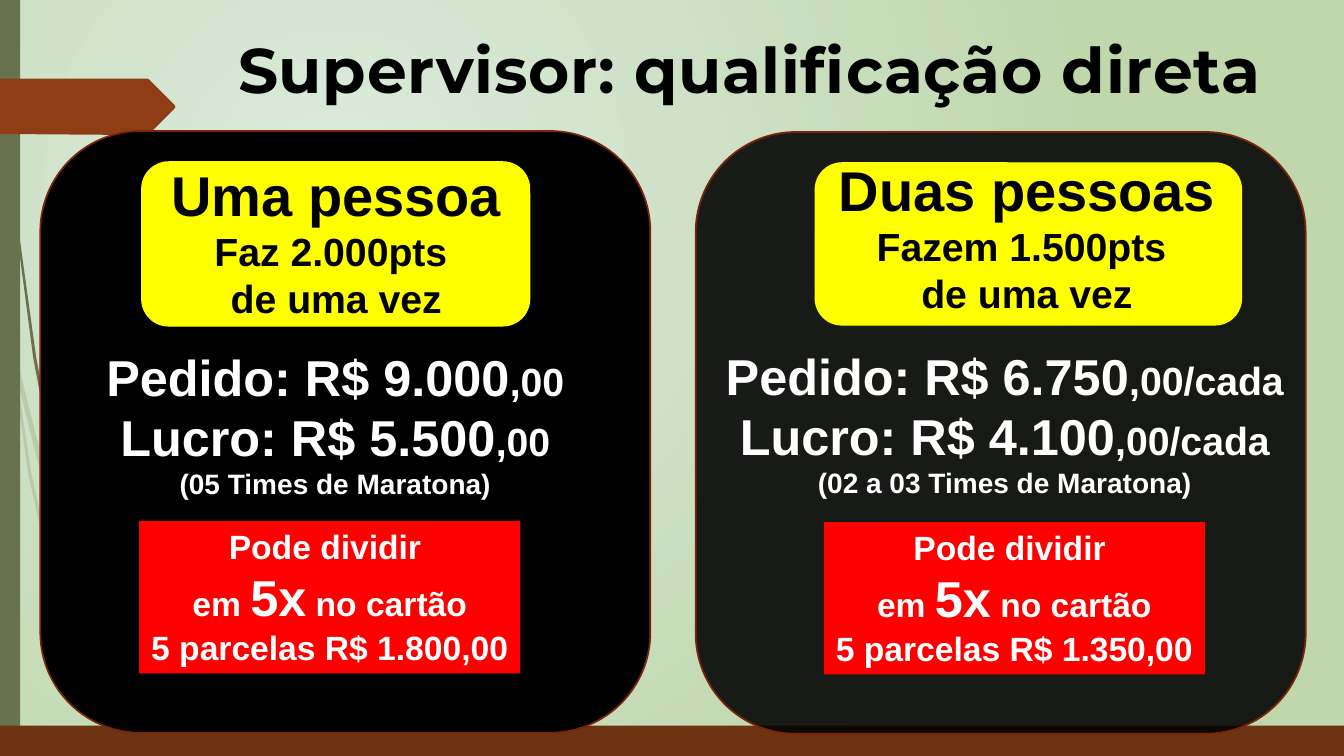
from lxml.etree import SubElement
from pptx import Presentation
from pptx.dml.color import RGBColor
from pptx.enum.shapes import MSO_SHAPE
from pptx.enum.text import MSO_ANCHOR, PP_ALIGN
from pptx.oxml.ns import qn
from pptx.util import Inches, Pt

prs = Presentation()
prs.slide_width, prs.slide_height = Inches(13.33), Inches(7.5)
s = prs.slides.add_slide(prs.slide_layouts[6])


def paint(sp, color, alpha=100, line=None):
    """Fill a shape with a hex colour, with optional opacity and outline."""
    sp.shadow.inherit = False
    sp.fill.solid()
    sp.fill.fore_color.rgb = RGBColor.from_string(color)
    if alpha < 100:
        clr = sp.fill._xPr.find(qn("a:solidFill"))[0]
        SubElement(clr, qn("a:alpha"), val=str(alpha * 1000))
    if line:
        sp.line.color.rgb = RGBColor.from_string(line)
        sp.line.width = Pt(1.25)
    else:
        sp.line.fill.background()
    return sp


def write(sp, lines, color, font="Arial", anchor=MSO_ANCHOR.TOP, spc=0):
    """Write centred bold lines, each a list of (text, size) runs."""
    tf = sp.text_frame
    tf.word_wrap = False
    tf.vertical_anchor = anchor
    for i, runs in enumerate(lines):
        p = tf.paragraphs[0] if i == 0 else tf.add_paragraph()
        p.alignment = PP_ALIGN.CENTER
        for text, size in runs:
            r = p.add_run()
            r.text = text
            r.font.name, r.font.size, r.font.bold = font, Pt(size), True
            r.font.color.rgb = RGBColor.from_string(color)
            if spc:
                r.font._element.set("spc", str(spc))


# Background: radial gradient
fill = s.background.fill
fill.gradient()
for stop, color in zip(fill.gradient_stops, ("FFFFFF", "DFE8C4")):
    stop.color.rgb = RGBColor.from_string(color)
    stop.position = 0 if color == "FFFFFF" else 1
grad = s.background._cSld.find(".//" + qn("a:gradFill"))
grad.remove(grad.find(qn("a:lin")))
radial = SubElement(grad, qn("a:path"), path="circle")
SubElement(radial, qn("a:fillToRect"), l="50000", t="50000", r="100000", b="100000")

# Grass blades on the left, in inches: pale ones, then solid ones
pale = [
    [(0.11, 3.5), (0.08, 3.22), (0, 2.82), (0, 2.99), (0.1, 3.44)],
    [(0.57, 5.22), (0.84, 5.99), (0.85, 5.86), (0.62, 5.2), (0.36, 4.33), (0.14, 3.45),
     (0.17, 3.76), (0.35, 4.49)],
    [(0.92, 6.07), (0.88, 5.96), (0.88, 6.1), (1.23, 6.94), (1.5, 7.5), (1.55, 7.5), (1.27, 6.92)],
    [(1.19, 7.5), (1.24, 7.5), (1.05, 7.11)],
    [(0.93, 6.83), (0.7, 6.19), (0.48, 5.45), (0.31, 4.69), (0.17, 3.76), (0.11, 3.5),
     (0.28, 4.7), (0.45, 5.46), (0.65, 6.21), (0.92, 6.93), (1.01, 7.14), (0.99, 7.07)],
    [(1.01, 7.14), (1.14, 7.5), (1.19, 7.5)],
    [(0.96, 6.92), (0.93, 6.83), (0.99, 7.07), (1.01, 7.14), (1.19, 7.5), (1.05, 7.11)],
]
solid = [
    [(0.07, 1.1), (0.17, 2.33), (0.33, 3.55), (0.56, 4.77), (0.57, 4.81), (0.55, 4.57), (0.55, 4.53),
     (0.36, 3.55), (0.19, 2.32), (0.08, 1.09), (0.05, 0.48), (0.03, 0), (0.03, 0.48)],
    [(1.13, 6.49), (1.1, 6.41), (1.11, 6.56), (1.32, 7.08), (1.52, 7.49), (1.57, 7.49), (1.36, 7.06)],
    [(1.33, 7.49), (1.36, 7.49), (1.22, 7.19)],
    [(1.17, 7.22), (1.27, 7.49), (1.31, 7.49)],
    [(1.16, 7.06), (1.1, 6.91), (1.16, 7.17), (1.17, 7.22), (1.31, 7.49), (1.33, 7.49), (1.22, 7.19)],
]
tag = [(1.73, 1.08), (1.48, 1.33), (1.46, 1.34), (1.36, 1.34), (0, 1.33), (0, 0.78),
       (1.46, 0.78), (1.48, 0.79), (1.73, 1.04), (1.74, 1.06)]
outlines = [(b, "766F54", 20) for b in pale] + [(b, "766F54", 100) for b in solid]

# Side bar, bottom bar and arrow tag follow the blades
for points, color, alpha in outlines + [(tag, "A53010", 100)]:
    if points is tag:
        for x, y, w, h, bar in ((0, 0, 0.2, 7.5, "766F54"), (0, 7.2, 13.33, 0.3, "7C240C")):
            paint(s.shapes.add_shape(MSO_SHAPE.RECTANGLE, Inches(x), Inches(y), Inches(w), Inches(h)), bar)
    start, *rest = [(Inches(x), Inches(y)) for x, y in points]
    fb = s.shapes.build_freeform(*start)
    fb.add_line_segments(rest, close=True)
    paint(fb.convert_to_shape(), color, alpha)

# Green veil over the whole slide
paint(s.shapes.add_shape(MSO_SHAPE.RECTANGLE, 0, 0, prs.slide_width, prs.slide_height), "228232", 16)

# Title
title = s.shapes.add_textbox(Inches(1.9), Inches(0.25), Inches(11.08), Inches(0.86))
write(title, [[("Supervisor: qualificação direta", 45)]], "000000", font="Montserrat",
      anchor=MSO_ANCHOR.MIDDLE, spc=50)

# Cards: panel, yellow heading, amounts and red instalment box
cards = [
    dict(panel=(0.4, 1.3), alpha=100, label=(1.4, 1.6, 3.86, 1.64), head=(1.58, 1.54, 3.51),
         body=(0.93, 3.38, 4.79), red=(1.38, 5.17), who="Uma pessoa", points="Faz 2.000pts ",
         order="9.000", profit="5.500", cents=",00", teams="(05 Times de Maratona)", part="1.800"),
    dict(panel=(6.9, 1.31), alpha=88, label=(8.08, 1.61, 4.24, 1.62), head=(8.2, 1.49, 3.97),
         body=(7.07, 3.37, 5.79), red=(8.17, 5.18), who="Duas pessoas", points="Fazem 1.500pts ",
         order="6.750", profit="4.100", cents=",00/cada", teams="(02 a 03 Times de Maratona)", part="1.350"),
]
for c in cards:
    panel = s.shapes.add_shape(MSO_SHAPE.ROUNDED_RECTANGLE, *map(Inches, c["panel"]), Inches(6.05), Inches(5.97))
    paint(panel, "000000", c["alpha"], line="7A240C")

    body = s.shapes.add_textbox(*map(Inches, c["body"]), Inches(1.7))
    write(body, [[("Pedido: R$ " + c["order"], 36), (c["cents"], 28)],
                 [("Lucro: R$ " + c["profit"], 36), (c["cents"], 28)],
                 [(c["teams"], 20)]], "FFFFFF")

    paint(s.shapes.add_shape(MSO_SHAPE.ROUNDED_RECTANGLE, *map(Inches, c["label"])), "FFFF00")
    head = s.shapes.add_textbox(*map(Inches, c["head"]), Inches(1.72))
    write(head, [[(c["who"], 40)], [(c["points"], 28)], [("de uma vez", 28)]], "000000")

    red = s.shapes.add_shape(MSO_SHAPE.RECTANGLE, *map(Inches, c["red"]), Inches(3.78), Inches(1.51))
    paint(red, "FF0000")
    write(red, [[("Pode dividir ", 24)],
                [("em ", 24), ("5x", 36), (" no cartão", 24)],
                [(f"5 parcelas R$ {c['part']},00", 24)]], "FFFFFF")

prs.save("out.pptx")
